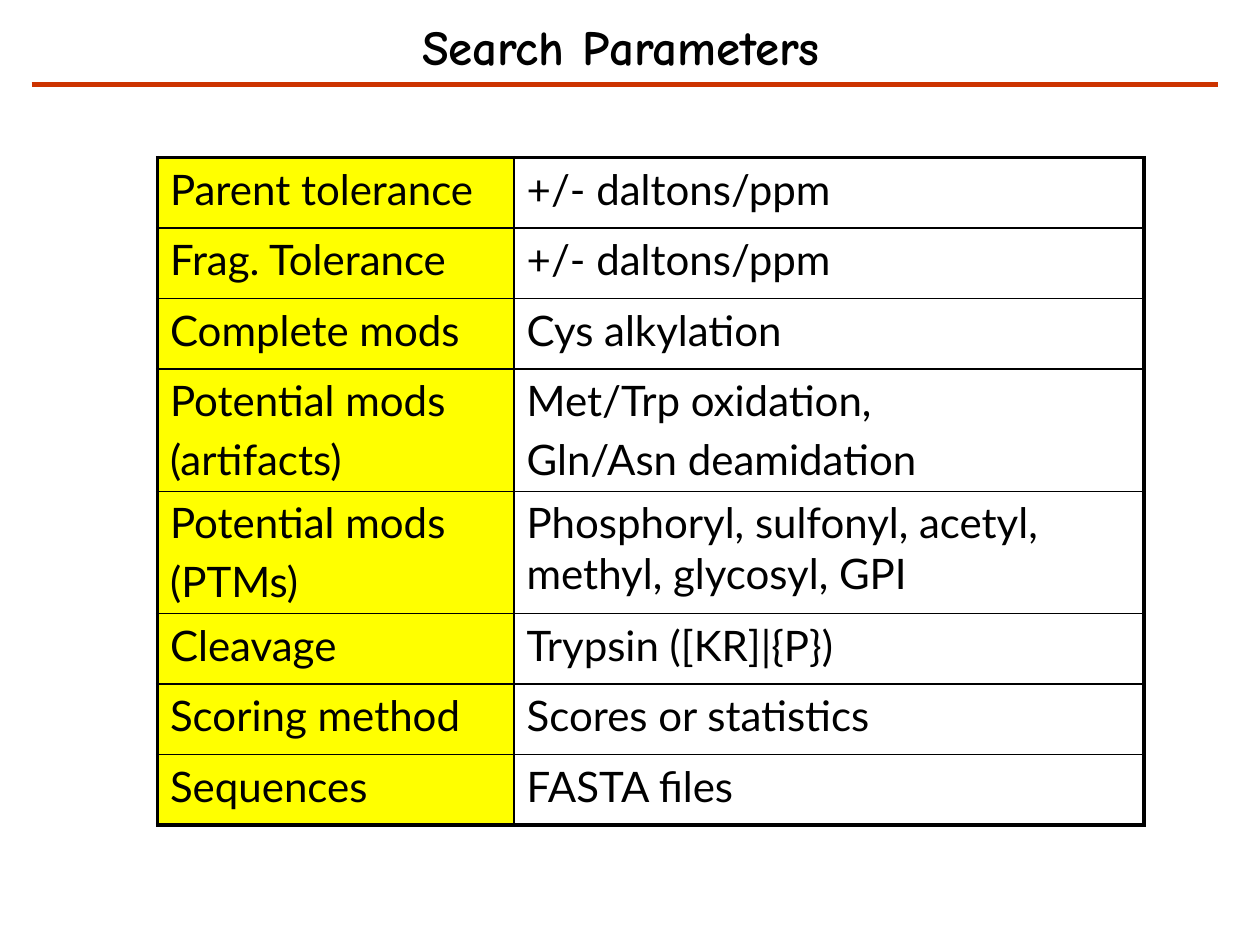
from lxml import etree
from pptx import Presentation
from pptx.dml.color import RGBColor
from pptx.enum.shapes import MSO_CONNECTOR
from pptx.enum.text import MSO_ANCHOR, PP_ALIGN
from pptx.oxml.ns import qn
from pptx.util import Inches, Pt

LEFT = PP_ALIGN.LEFT
TOP = MSO_ANCHOR.TOP
STRAIGHT = MSO_CONNECTOR.STRAIGHT

THEME = {
    "ink": "000000", "label_fill": "FFFF00", "rule": "CC3300",
    "title_font": "Comic Neue", "title_size": 28,
    "body_font": "Lato", "body_size": 24, "space_before": 4.8,
    "outer_border": 2.25, "inner_border": 1, "rule_width": 2.5,
}

TITLE = "Search Parameters"
PARAMETERS = [
    (["Parent tolerance"], ["+/- daltons/ppm"]),
    (["Frag. Tolerance"], ["+/- daltons/ppm"]),
    (["Complete mods"], ["Cys alkylation"]),
    (["Potential mods", "(artifacts)"], ["Met/Trp oxidation,", "Gln/Asn deamidation"]),
    (["Potential mods", "(PTMs)"], ["Phosphoryl, sulfonyl, acetyl, methyl, glycosyl, GPI"]),
    (["Cleavage"], ["Trypsin ([KR]|{P})"]),
    (["Scoring method"], ["Scores or statistics"]),
    (["Sequences"], ["FASTA files"]),
]
COLUMN_WIDTHS = [2.83, 5]
ROW_HEIGHTS = {1: 0.56, 2: 0.97}


def color(key):
    return RGBColor.from_string(THEME[key])


def style(paragraph, role):
    paragraph.font.name = THEME[f"{role}_font"]
    paragraph.font.size = Pt(THEME[f"{role}_size"])
    paragraph.font.color.rgb = color("ink")
    paragraph.alignment = LEFT


def set_borders(cell, outer_sides):
    properties = cell._tc.get_or_add_tcPr()
    for index, (side, is_outer) in enumerate(outer_sides.items()):
        width = Pt(THEME["outer_border" if is_outer else "inner_border"])
        border = etree.Element(qn(f"a:{side}"), w=str(int(width)))
        fill = etree.SubElement(border, qn("a:solidFill"))
        etree.SubElement(fill, qn("a:srgbClr"), val=THEME["ink"])
        properties.insert(index, border)


def add_title(slide):
    title = slide.shapes.title
    title.left, title.top = Inches(3.25), Inches(0.08)
    title.width, title.height = Inches(3.84), Inches(0.57)
    frame = title.text_frame
    frame.text = TITLE
    frame.vertical_anchor = TOP
    style(frame.paragraphs[0], "title")
    frame.paragraphs[0].font.bold = True


def add_rule(slide):
    rule = slide.shapes.add_connector(
        STRAIGHT, Inches(0.25), Inches(0.67), Inches(9.67), Inches(0.67))
    rule.line.color.rgb = color("rule")
    rule.line.width = Pt(THEME["rule_width"])
    etree.SubElement(rule._element.spPr, qn("a:effectLst"))


def fill_cell(cell, lines, is_label):
    cell.text = "\n".join(lines)
    for paragraph in cell.text_frame.paragraphs:
        style(paragraph, "body")
        paragraph.space_before = Pt(THEME["space_before"])
    if is_label:
        cell.fill.solid()
        cell.fill.fore_color.rgb = color("label_fill")
    else:
        cell.fill.background()


def add_parameter_table(slide):
    heights = [ROW_HEIGHTS[len(label)] for label, _ in PARAMETERS]
    table = slide.shapes.add_table(
        len(PARAMETERS), len(COLUMN_WIDTHS), Inches(1.25), Inches(1.25),
        Inches(sum(COLUMN_WIDTHS)), Inches(sum(heights))).table
    table.first_row = table.horz_banding = False
    for column, width in zip(table.columns, COLUMN_WIDTHS):
        column.width = Inches(width)
    last_row, last_column = len(PARAMETERS) - 1, len(COLUMN_WIDTHS) - 1
    for r, (parameter, height) in enumerate(zip(PARAMETERS, heights)):
        table.rows[r].height = Inches(height)
        for c, lines in enumerate(parameter):
            cell = table.cell(r, c)
            fill_cell(cell, lines, is_label=c == 0)
            set_borders(cell, {"lnL": c == 0, "lnR": c == last_column,
                               "lnT": r == 0, "lnB": r == last_row})


def main():
    presentation = Presentation()
    presentation.slide_width, presentation.slide_height = Inches(10), Inches(7.5)
    slide = presentation.slides.add_slide(
        presentation.slide_layouts.get_by_name("Title Only"))
    add_title(slide)
    add_parameter_table(slide)
    add_rule(slide)
    presentation.save("out.pptx")


if __name__ == "__main__":
    main()
